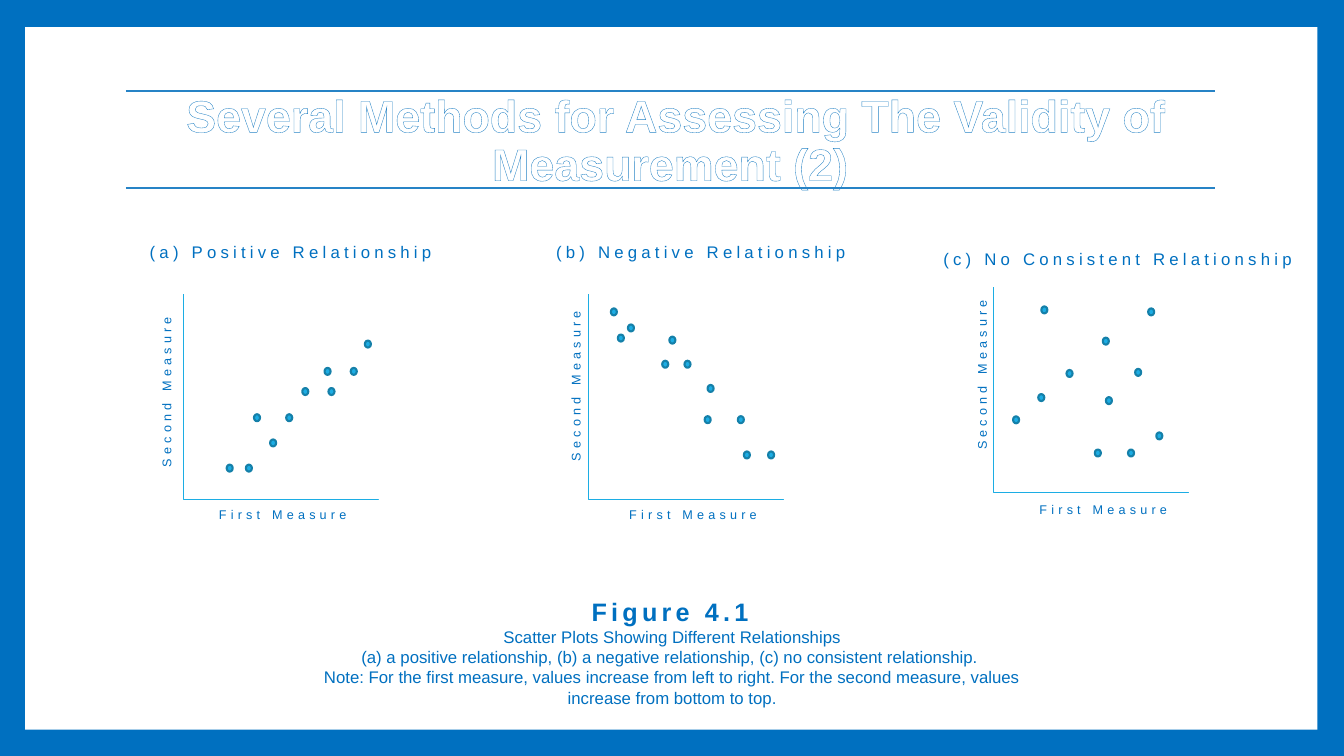
"""Build the slide of three scatter plots on assessing measurement validity."""
from dataclasses import dataclass

from lxml.etree import SubElement
from pptx import Presentation
from pptx.dml.color import RGBColor
from pptx.enum.shapes import MSO_CONNECTOR, MSO_SHAPE
from pptx.enum.text import MSO_ANCHOR, MSO_AUTO_SIZE, PP_ALIGN
from pptx.oxml.ns import qn
from pptx.shapes.connector import Connector
from pptx.slide import Slide
from pptx.util import Pt


@dataclass(frozen=True)
class Theme:
    font: str = "Arial"
    blue: str = "0070C0"
    rule: str = "2683C6"
    dot: str = "1CADE4"
    dot_line: str = "1580A9"
    white: str = "FFFFFF"
    title: float = 32
    figure: float = 18
    text: float = 12
    axis: float = 9


@dataclass(frozen=True)
class Box:
    x: float
    y: float
    w: float
    h: float

    def emu(self) -> tuple:
        return Pt(self.x), Pt(self.y), Pt(self.w), Pt(self.h)


@dataclass(frozen=True)
class Plot:
    heading: str
    heading_box: Box
    x: float
    y: float
    second_box: Box
    first_box: Box
    dots: tuple


T = Theme()
AXIS_W, AXIS_H = 139, 147
DOT_W, DOT_H = 4.3, 5
SPACING = 3

PLOTS = (
    Plot("(a) Positive Relationship", Box(90, 169.2, 231.8, 21.6), 131, 210.2,
         Box(46.1, 272.9, 145.4, 18), Box(127.4, 358.6, 145.4, 18),
         ((46.8, 124.2), (33.1, 124.2), (64.1, 106.2), (52.6, 88.2), (75.6, 88.2),
          (87.1, 69.5), (105.8, 69.5), (103, 55.1), (121.7, 55.1), (131.8, 35.6))),
    Plot("(b) Negative Relationship", Box(383, 169.2, 231.8, 21.6), 420.5, 210.2,
         Box(338.4, 268.6, 145.4, 18), Box(420.5, 358.6, 145.4, 18),
         ((18, 12.6), (23, 31.3), (59.8, 32.8), (54.7, 50), (70.6, 50), (87.1, 67.3),
          (85, 89.6), (30.2, 24.1), (108.7, 89.6), (113, 114.8), (130.3, 114.8))),
    Plot("(c) No Consistent Relationship", Box(662.4, 174.2, 268.6, 21.6), 710, 205.2,
         Box(628.6, 260.6, 145.4, 18), Box(713.5, 355, 145.4, 18),
         ((15.8, 94.7), (33.8, 78.8), (54, 61.6), (36, 16.2), (79.9, 38.5), (112.3, 17.6),
          (82.1, 81), (103, 60.8), (74.2, 118.4), (97.9, 118.4), (118.1, 106.2))),
)

CAPTION = (
    "Scatter Plots Showing Different Relationships",
    "(a) a positive relationship, (b) a negative relationship, (c) no consistent relationship. ",
    "Note: For the first measure, values increase from left to right. For the second measure, values",
    "increase from bottom to top.",
)


def rgb(color: str) -> RGBColor:
    return RGBColor.from_string(color)


def apply(target, **formats) -> None:
    for name, value in formats.items():
        setattr(target, name, value)


def add_run(p, text: str, size: float, color: str = T.blue, bold: bool = False, spacing: float = 0):
    r = p.add_run()
    r.text = text
    apply(r.font, name=T.font, size=Pt(size), bold=bold)
    r.font.color.rgb = rgb(color)
    if spacing:
        r.font._element.set("spc", str(int(spacing * 100)))
    return r


def centre(p) -> None:
    p.alignment = PP_ALIGN.CENTER
    pPr = p._p.get_or_add_pPr()
    pPr.set("marL", str(Pt(3.6)))
    pPr.set("indent", "0")


def add_text(slide: Slide, box: Box):
    sp = slide.shapes.add_textbox(*box.emu())
    apply(sp.text_frame, word_wrap=True, auto_size=MSO_AUTO_SIZE.SHAPE_TO_FIT_TEXT)
    return sp


def add_label(slide: Slide, box: Box, text: str, size: float, rotation: float = 0) -> None:
    sp = add_text(slide, box)
    sp.rotation = rotation
    p = sp.text_frame.paragraphs[0]
    centre(p)
    add_run(p, text, size, spacing=SPACING)


def add_shape(slide: Slide, kind: MSO_SHAPE, box: Box, fill: str, line: str = ""):
    sp = slide.shapes.add_shape(kind, *box.emu())
    sp.shadow.inherit = False
    sp.fill.solid()
    sp.fill.fore_color.rgb = rgb(fill)
    if line:
        sp.line.color.rgb = rgb(line)
        sp.line.width = Pt(1.5)
    else:
        sp.line.fill.background()
    return sp


def add_line(slide: Slide, kind: MSO_CONNECTOR, ends: tuple, color: str, width: float) -> Connector:
    cxn = slide.shapes.add_connector(kind, *map(Pt, ends))
    cxn.line.color.rgb = rgb(color)
    cxn.line.width = Pt(width)
    SubElement(cxn._element.spPr, qn("a:effectLst"))
    return cxn


def add_axes(slide: Slide, plot: Plot) -> None:
    cx, cy = plot.x + AXIS_W / 2, plot.y + AXIS_H / 2
    ends = (cx + AXIS_H / 2, cy - AXIS_W / 2, cx - AXIS_H / 2, cy + AXIS_W / 2)
    spPr = add_line(slide, MSO_CONNECTOR.ELBOW, ends, T.dot, 0.79)._element.spPr
    spPr.find(qn("a:xfrm")).set("rot", str(270 * 60000))
    guides = spPr.find(qn("a:prstGeom")).find(qn("a:avLst"))
    SubElement(guides, qn("a:gd"), name="adj1", fmla="val 99700")


def add_plot(slide: Slide, plot: Plot) -> None:
    add_axes(slide, plot)
    add_label(slide, plot.heading_box, plot.heading, T.text)
    add_label(slide, plot.second_box, "Second Measure", T.axis, 270)
    add_label(slide, plot.first_box, "First Measure", T.axis)
    for dx, dy in plot.dots:
        box = Box(plot.x + dx - DOT_W / 2, plot.y + dy - DOT_H / 2, DOT_W, DOT_H)
        add_shape(slide, MSO_SHAPE.FLOWCHART_CONNECTOR, box, T.dot, T.dot_line)


def add_title(slide: Slide) -> None:
    title = slide.shapes.title
    left, top, width, height = Box(90, 48.2, 777.6, 106.6).emu()
    apply(title, left=left, top=top, width=width, height=height)
    tf = title.text_frame
    apply(tf, word_wrap=True, auto_size=MSO_AUTO_SIZE.NONE, vertical_anchor=MSO_ANCHOR.MIDDLE)
    p = tf.paragraphs[0]
    apply(p, alignment=PP_ALIGN.CENTER, line_spacing=0.9)
    r = add_run(p, " Several Methods for Assessing The Validity of Measurement (2)",
                T.title, T.white, bold=True)
    rPr = r.font._element
    ln = SubElement(rPr, qn("a:ln"), w=str(Pt(0.52)))
    SubElement(SubElement(ln, qn("a:solidFill")), qn("a:srgbClr"), val=T.rule)
    rPr.insert(0, ln)


def add_caption(slide: Slide) -> None:
    tf = add_text(slide, Box(98.6, 422.6, 759.6, 87.1)).text_frame
    for i, text in enumerate(CAPTION):
        p = tf.add_paragraph() if i else tf.paragraphs[0]
        centre(p)
        if i == 0:
            add_run(p, "Figure 4.1", T.figure, bold=True, spacing=SPACING)
            p.add_line_break()
        add_run(p, text, T.text)


def main() -> None:
    prs = Presentation()
    apply(prs, slide_width=Pt(960), slide_height=Pt(540))
    slide = prs.slides.add_slide(prs.slide_layouts[5])
    slide.background.fill.solid()
    slide.background.fill.fore_color.rgb = rgb(T.blue)
    panel = add_shape(slide, MSO_SHAPE.RECTANGLE, Box(18, 19.4, 923, 501.8), T.white)
    slide.shapes.title.element.addprevious(panel.element)
    add_title(slide)
    for y in (64.8, 134.6):
        add_line(slide, MSO_CONNECTOR.STRAIGHT, (90, y, 867.6, y), T.rule, 1.5)
    add_caption(slide)
    for plot in PLOTS:
        add_plot(slide, plot)
    prs.save("out.pptx")


if __name__ == "__main__":
    main()
